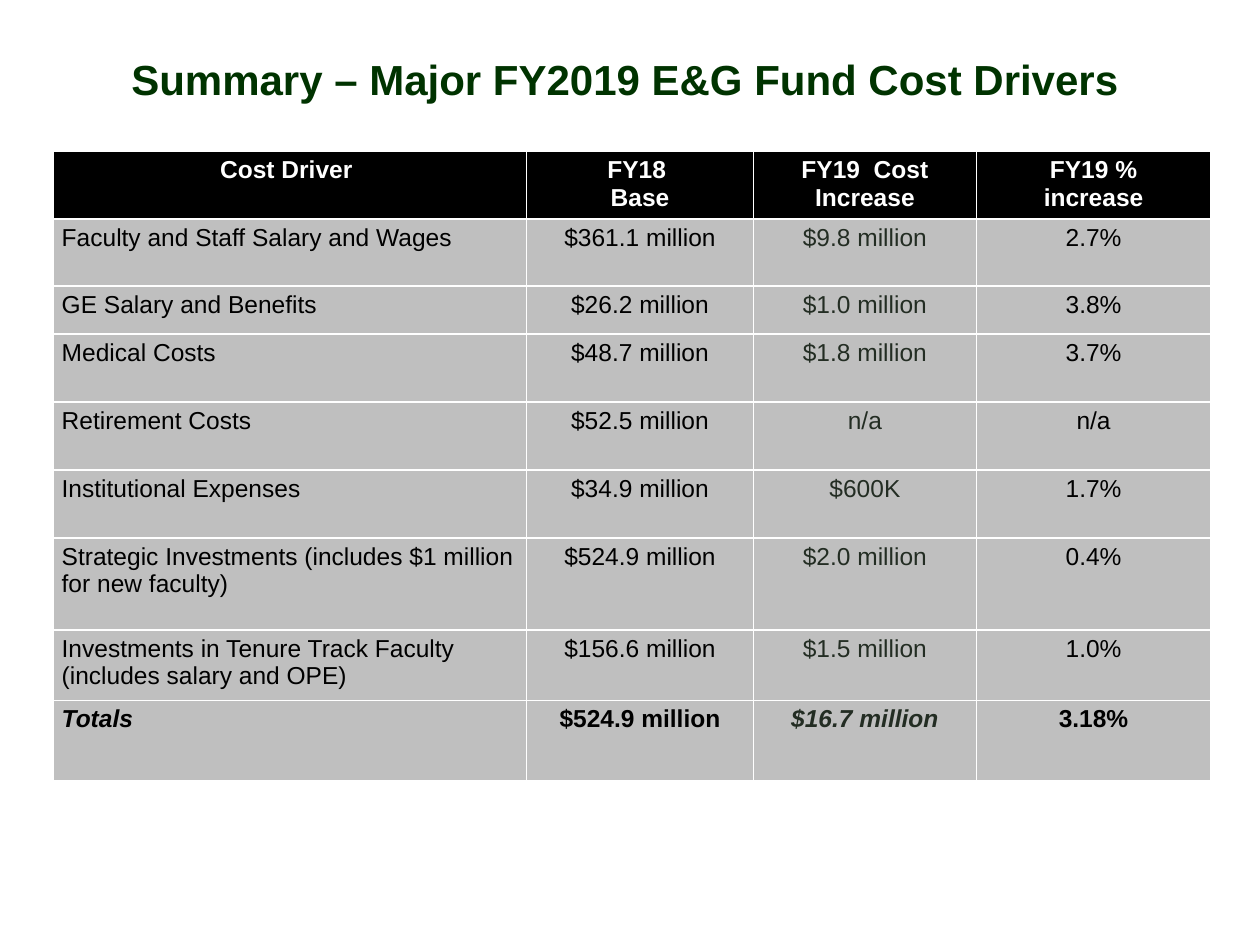
"""Build the slide summarising the major FY2019 cost drivers."""
from pptx import Presentation
from pptx.dml.color import RGBColor
from pptx.enum.text import MSO_ANCHOR, PP_ALIGN
from pptx.util import Inches, Pt

LEFT, CENTER, MIDDLE = PP_ALIGN.LEFT, PP_ALIGN.CENTER, MSO_ANCHOR.MIDDLE
TITLE_ONLY = 5

TITLE = "Summary – Major FY2019 E&G Fund Cost Drivers"
HEADER = ("Cost Driver ", "FY18 \vBase", "FY19  Cost Increase", "FY19 %\nincrease")
COSTS = [
    ("Faculty and Staff Salary and Wages", "$361.1 million", "$9.8 million", "2.7%"),
    ("GE Salary and Benefits", "$26.2 million", "$1.0 million", "3.8%"),
    ("Medical Costs", "$48.7 million", "$1.8 million", "3.7%"),
    ("Retirement Costs", "$52.5 million", "n/a", "n/a"),
    ("Institutional Expenses", "$34.9 million", "$600K", "1.7%"),
    ("Strategic Investments (includes $1 million for new faculty)",
     "$524.9 million", "$2.0 million", "0.4%"),
    ("Investments in Tenure Track Faculty (includes salary and OPE)",
     "$156.6 million", "$1.5 million", "1.0%"),
]
TOTALS = ("Totals", "$524.9 million", "$16.7 million", "3.18%")
ROWS = [HEADER, *COSTS, TOTALS]
TOTAL_ROW = len(ROWS) - 1
DRIVER_COLUMN, INCREASE_COLUMN = 0, 2

COLUMN_WIDTHS = (3.76, 1.8, 1.77, 1.86)
ROW_HEIGHTS = (0.54, 0.53, 0.38, 0.54, 0.54, 0.54, 0.73, 0.56, 0.64)
COLORS = {
    "title": "003300", "header_fill": "000000", "header_text": "FFFFFF",
    "body_fill": "BFBFBF", "body_text": "000000", "increase_text": "232D23",
}


def color(name):
    """Return a named colour."""
    return RGBColor.from_string(COLORS[name])


def format_text(frame, size, color_name, alignment, bold=False, italic=False):
    """Format every paragraph of a text frame alike."""
    for paragraph in frame.paragraphs:
        paragraph.alignment = alignment
        font = paragraph.font
        font.name, font.size = "Arial", Pt(size)
        font.bold, font.italic = bold, italic
        font.color.rgb = color(color_name)


def add_title(slide):
    """Place and format the slide title."""
    title = slide.shapes.title
    title.left, title.top = Inches(0.92), Inches(0.17)
    title.width, title.height = Inches(8.08), Inches(0.91)
    title.text_frame.text = TITLE
    title.text_frame.vertical_anchor = MIDDLE
    format_text(title.text_frame, 24, "title", CENTER, bold=True)


def fill_cell(cell, text, row, column):
    """Write one cell and style it by its place in the table."""
    is_header, is_total = row == 0, row == TOTAL_ROW
    is_driver, is_increase = column == DRIVER_COLUMN, column == INCREASE_COLUMN
    cell.margin_left = cell.margin_right = Inches(0.07)
    cell.margin_top = cell.margin_bottom = Inches(0.04)
    cell.fill.solid()
    cell.fill.fore_color.rgb = color("header_fill" if is_header else "body_fill")
    cell.text_frame.text = text
    text_color = ("header_text" if is_header
                  else "increase_text" if is_increase else "body_text")
    format_text(cell.text_frame, 14, text_color,
                LEFT if is_driver and not is_header else CENTER,
                bold=is_header or is_total,
                italic=is_total and (is_driver or is_increase))


def add_cost_table(slide):
    """Add the table of cost drivers."""
    frame = slide.shapes.add_table(
        len(ROWS), len(HEADER), Inches(0.42), Inches(1.2),
        Inches(sum(COLUMN_WIDTHS)), Inches(sum(ROW_HEIGHTS)))
    table = frame.table
    table.horz_banding = False
    for column, width in zip(table.columns, COLUMN_WIDTHS):
        column.width = Inches(width)
    for row, height in zip(table.rows, ROW_HEIGHTS):
        row.height = Inches(height)
    for row, texts in enumerate(ROWS):
        for column, text in enumerate(texts):
            fill_cell(table.cell(row, column), text, row, column)


def main():
    """Create and save the presentation."""
    presentation = Presentation()
    presentation.slide_width, presentation.slide_height = Inches(10), Inches(7.5)
    slide = presentation.slides.add_slide(presentation.slide_layouts[TITLE_ONLY])
    add_title(slide)
    add_cost_table(slide)
    presentation.save("out.pptx")


if __name__ == "__main__":
    main()
